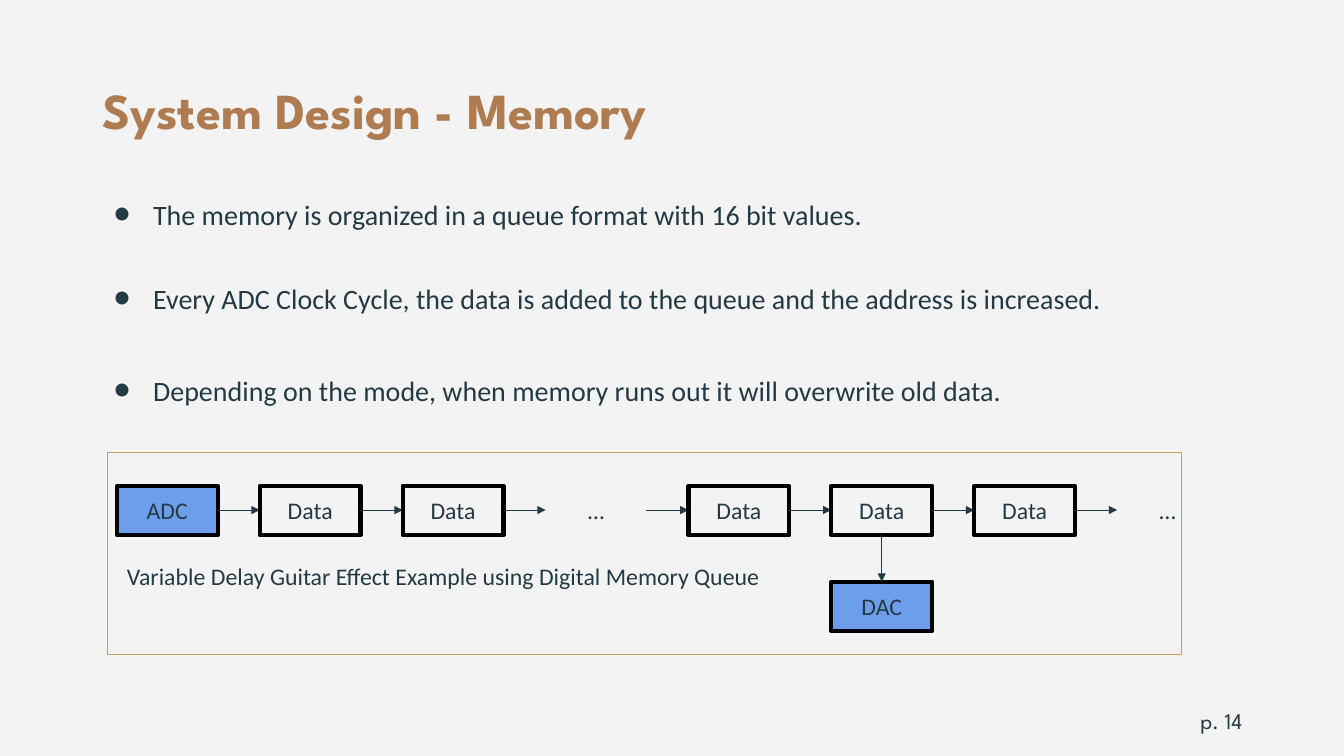
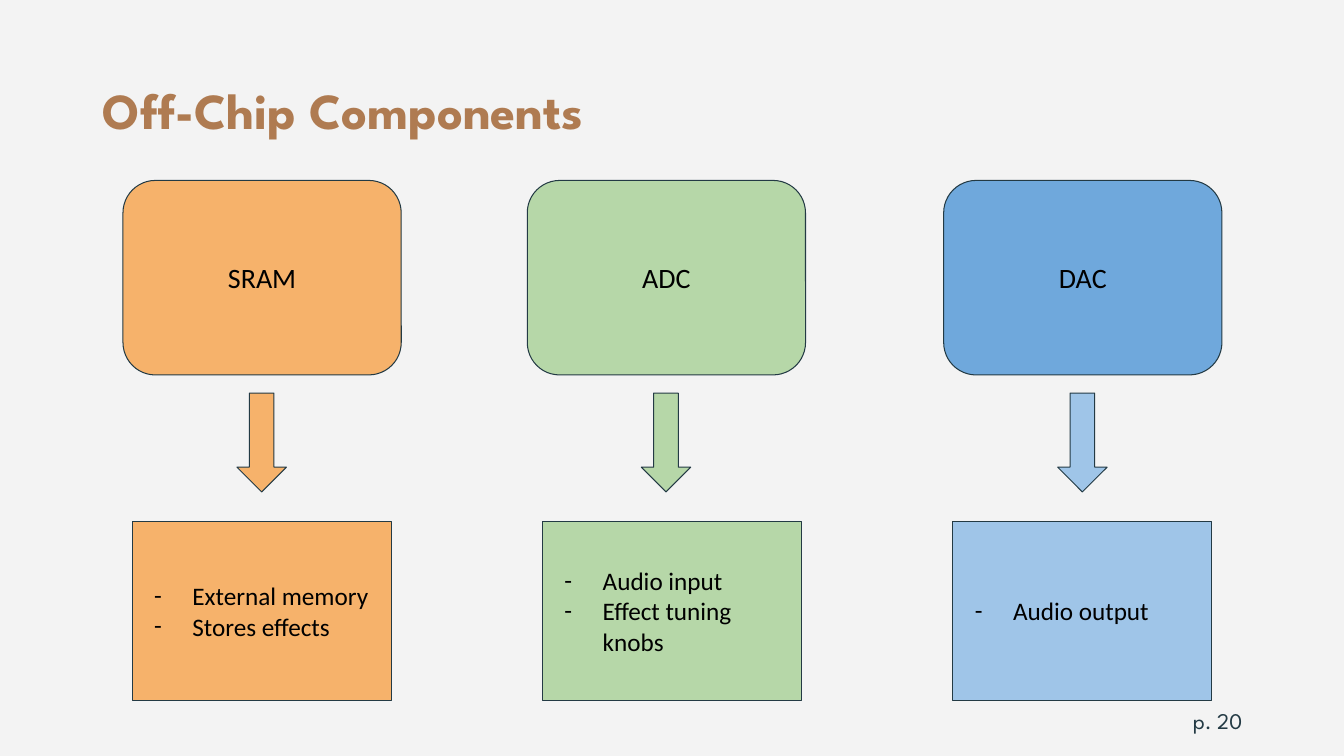
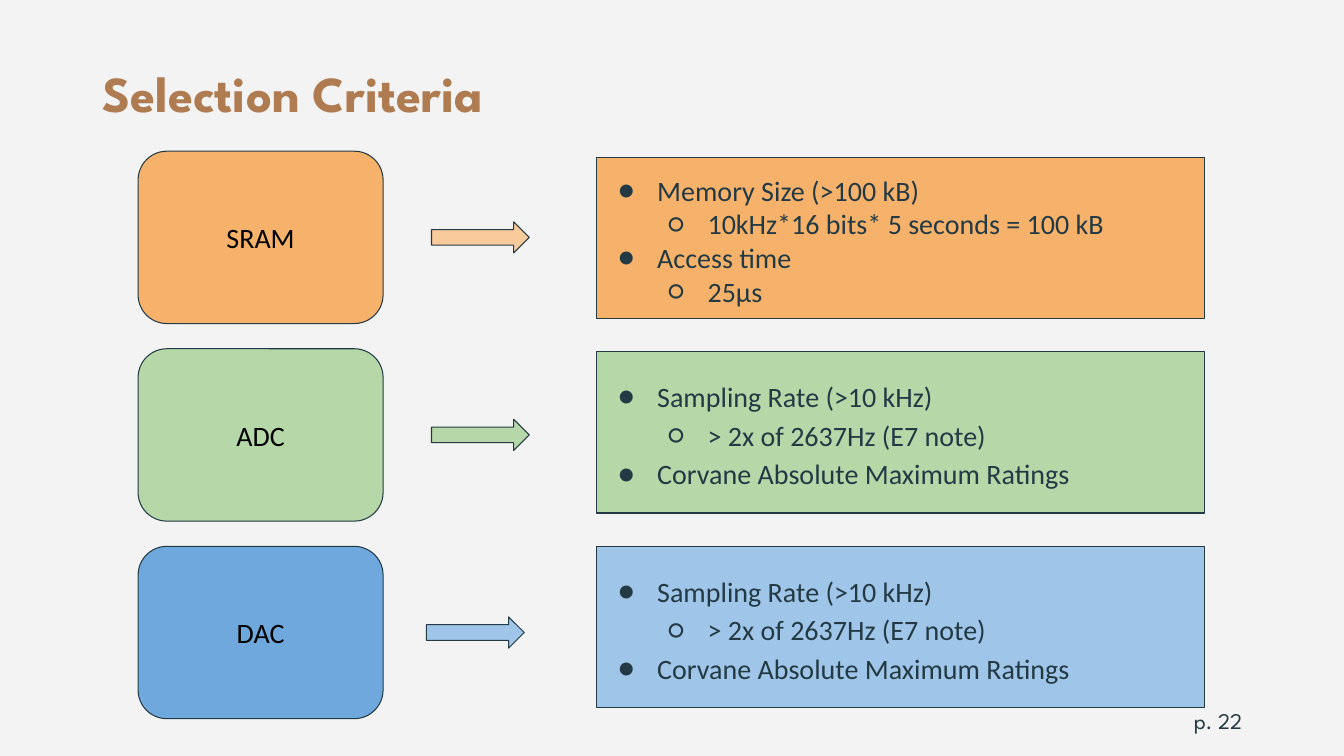
import lxml.etree
import pptx
import pptx.dml.color
import pptx.enum.shapes
import pptx.enum.text
import pptx.oxml.ns
import pptx.util

Inches = pptx.util.Inches
Align = pptx.enum.text.PP_ALIGN
Anchor = pptx.enum.text.MSO_ANCHOR
Preset = pptx.enum.shapes.MSO_SHAPE

INK, BLACK, BRONZE, GOLD, PAPER = "233A44", "000000", "AF7B51", "C4A15A", "F3F3F3"
ORANGE, PEACH, GREEN = "F6B26B", "F9CB9C", "B6D7A8"
BLUE, SKY, CORNFLOWER = "6FA8DC", "9FC5E8", "6D9EEB"
BODY_FONT, HEADING_FONT = "Calibri", "League Spartan"
CHIPS = [("SRAM", ORANGE), ("ADC", GREEN), ("DAC", BLUE)]


def rgb(code):
    """Turn a hex string into a colour."""
    return pptx.dml.color.RGBColor.from_string(code)


def add_element(parent, tag, **attributes):
    """Append a drawing element to a parent element."""
    return lxml.etree.SubElement(parent, pptx.oxml.ns.qn(tag), **attributes)


def write(frame, text, size=20, color=INK, font=BODY_FONT, bold=False, align=Align.LEFT,
          spacing=1.0, before=0, bullet=None, level=0, hang=0.39):
    """Add one formatted paragraph to a text frame."""
    paragraph = frame.paragraphs[-1]
    if paragraph.runs:
        paragraph = frame.add_paragraph()
    paragraph.alignment = align
    paragraph.line_spacing = spacing
    paragraph.space_before = pptx.util.Pt(before)
    paragraph.level = level
    run = paragraph.add_run()
    run.text = text
    run.font.size = pptx.util.Pt(size)
    run.font.name = font
    run.font.bold = bold
    run.font.color.rgb = rgb(color)
    if bullet:
        properties = paragraph._p.get_or_add_pPr()
        properties.set("marL", str(Inches(0.5 * (level + 1))))
        properties.set("indent", str(Inches(-hang)))
        add_element(add_element(properties, "a:buClr"), "a:srgbClr", val=color)
        add_element(properties, "a:buFont", typeface=font)
        add_element(properties, "a:buChar", char=bullet)


class Deck:
    """Hold the shared style and the current slide."""

    def __init__(self):
        """Start an empty widescreen presentation."""
        self.presentation = pptx.Presentation()
        self.presentation.slide_width = Inches(13.33)
        self.presentation.slide_height = Inches(7.5)

    def new_slide(self, title, page, title_top=0.4):
        """Add a slide with its background, title and page number."""
        self.slide = self.presentation.slides.add_slide(self.presentation.slide_layouts[6])
        self.slide.background.fill.solid()
        self.slide.background.fill.fore_color.rgb = rgb(PAPER)
        heading = self.textbox(0.92, title_top, 11.5, 1.45, anchor=Anchor.MIDDLE)
        write(heading, title, size=36, color=BRONZE, font=HEADING_FONT, bold=True, spacing=0.9)
        footer = self.textbox(9.42, 6.95, 3, 0.4, anchor=Anchor.MIDDLE)
        write(footer, f"p. {page}", size=16, font=HEADING_FONT, align=Align.RIGHT)

    def set_frame(self, frame, anchor, margin):
        """Set wrapping, anchor and margins of a text frame."""
        frame.word_wrap = True
        frame.vertical_anchor = anchor
        frame.margin_left = frame.margin_right = Inches(0.1)
        frame.margin_top = frame.margin_bottom = Inches(margin)
        return frame

    def textbox(self, left, top, width, height, anchor=Anchor.TOP, margin=0.05):
        """Add a text box and return its frame."""
        box = self.slide.shapes.add_textbox(*map(Inches, (left, top, width, height)))
        return self.set_frame(box.text_frame, anchor, margin)

    def shape(self, preset, left, top, width, height, fill=None, line=INK, weight=0.75,
              anchor=Anchor.MIDDLE):
        """Add a preset shape and return its text frame."""
        shape = self.slide.shapes.add_shape(preset, *map(Inches, (left, top, width, height)))
        shape.shadow.inherit = False
        if fill:
            shape.fill.solid()
            shape.fill.fore_color.rgb = rgb(fill)
        else:
            shape.fill.background()
        shape.line.color.rgb = rgb(line)
        shape.line.width = pptx.util.Pt(weight)
        return self.set_frame(shape.text_frame, anchor, 0.1)

    def chip(self, name, fill, left, top, width, height):
        """Add a rounded card that names a component."""
        card = self.shape(Preset.ROUNDED_RECTANGLE, left, top, width, height, fill)
        write(card, name, color=BLACK, align=Align.CENTER)

    def queue_cell(self, label, left, top, fill=None):
        """Add a heavily outlined cell of the memory queue."""
        cell = self.shape(Preset.RECTANGLE, left, top, 1, 0.49, fill, BLACK, 3, Anchor.TOP)
        write(cell, label, size=17, align=Align.CENTER)

    def arrow(self, x1, y1, x2, y2):
        """Add a thin line with an arrowhead at its end."""
        connector = self.slide.shapes.add_connector(
            pptx.enum.shapes.MSO_CONNECTOR.STRAIGHT, *map(Inches, (x1, y1, x2, y2)))
        connector.line.color.rgb = rgb(INK)
        connector.line.width = pptx.util.Pt(0.75)
        add_element(connector.line._get_or_add_ln(), "a:tailEnd", type="triangle")
        add_element(connector._element.spPr, "a:effectLst")


def build_memory(deck):
    """Build the slide on the memory queue."""
    deck.new_slide("System Design - Memory", 14)
    points = deck.textbox(0.92, 2, 11.5, 2.13)
    for text, before in [
        ("The memory is organized in a queue format with 16 bit values.", 10),
        ("Every ADC Clock Cycle, the data is added to the queue and the address is increased.", 43),
        ("Depending on the mode, when memory runs out it will overwrite old data.", 49),
    ]:
        write(points, text, spacing=0.7, before=before, bullet="●")

    queue = ["ADC", "Data", "Data", "…", "Data", "Data", "Data", "…"]
    first, top, middle = 1.16, 4.82, 5.06
    pitch = (11.08 - first) / (len(queue) - 1)
    for index, label in enumerate(queue):
        left = first + index * pitch
        if label == "…":
            gap = deck.textbox(left, top, 1, 0.49, margin=0.1)
            write(gap, label, size=17, align=Align.CENTER)
        else:
            deck.queue_cell(label, left, top, CORNFLOWER if label == "ADC" else None)
        if index < len(queue) - 1:
            deck.arrow(left + 1, middle, left + pitch, middle)

    output_left = first + 5 * pitch
    deck.queue_cell("DAC", output_left, 5.77, CORNFLOWER)
    deck.arrow(output_left + 0.5, 5.31, output_left + 0.5, 5.77)
    caption = deck.textbox(first, 5.47, 8.85, 0.49, margin=0.1)
    write(caption, "Variable Delay Guitar Effect Example using Digital Memory Queue", size=17)
    deck.shape(Preset.RECTANGLE, 1.07, 4.49, 10.65, 2, line=GOLD)


def build_components(deck):
    """Build the slide on the off-chip components."""
    deck.new_slide("Off-Chip Components", 20)
    lefts = [1.22, 5.23, 9.36]
    roles = [
        (ORANGE, ["External memory", "Stores effects"]),
        (GREEN, ["Audio input", "Effect tuning knobs"]),
        (SKY, ["Audio output"]),
    ]
    for column, ((name, fill), left, (role_fill, uses)) in enumerate(zip(CHIPS, lefts, roles)):
        deck.chip(name, fill, left, 1.79, 2.76, 1.93)
        deck.shape(Preset.DOWN_ARROW, left + 1.13, 3.9, 0.49, 0.98, role_fill)
        role = deck.shape(Preset.RECTANGLE, 1.31 + 4.07 * column, 5.17, 2.57, 1.78, role_fill)
        for use in uses:
            write(role, use, size=18, color=BLACK, bullet="-", hang=0.38)


def build_criteria(deck):
    """Build the slide on the selection criteria."""
    deck.new_slide("Selection Criteria", 22, title_top=0.23)
    memory = [
        ("Memory Size (>100 kB)", 0, 1.15),
        ("10kHz*16 bits* 5 seconds = 100 kB", 1, 1.0),
        ("Access time", 0, 1.0),
        ("25µs", 1, 1.0),
    ]
    converter = [
        ("Sampling Rate (>10 kHz)", 0, 1.15),
        ("> 2x of 2637Hz (E7 note)", 1, 1.15),
        ("Corvane Absolute Maximum Ratings", 0, 1.15),
    ]
    rows = [
        (4.28, PEACH, ORANGE, memory),
        (4.28, GREEN, GREEN, converter),
        (4.23, SKY, SKY, converter),
    ]
    for row, ((name, fill), (arrow_left, arrow_fill, panel_fill, criteria)) in enumerate(
            zip(CHIPS, rows)):
        top = 1.5 + 1.96 * row
        deck.chip(name, fill, 1.37, top, 2.43, 1.71)
        deck.shape(Preset.RIGHT_ARROW, arrow_left, top + 0.7, 0.97, 0.31, arrow_fill)
        panel = deck.shape(Preset.RECTANGLE, 5.92, 1.56 + 1.93 * row, 6.03, 1.6, panel_fill)
        for text, level, spacing in criteria:
            write(panel, text, spacing=spacing, level=level, bullet="●○"[level])


def main():
    """Build the slides and save the file."""
    deck = Deck()
    build_memory(deck)
    build_components(deck)
    build_criteria(deck)
    deck.presentation.save("out.pptx")


if __name__ == "__main__":
    main()
